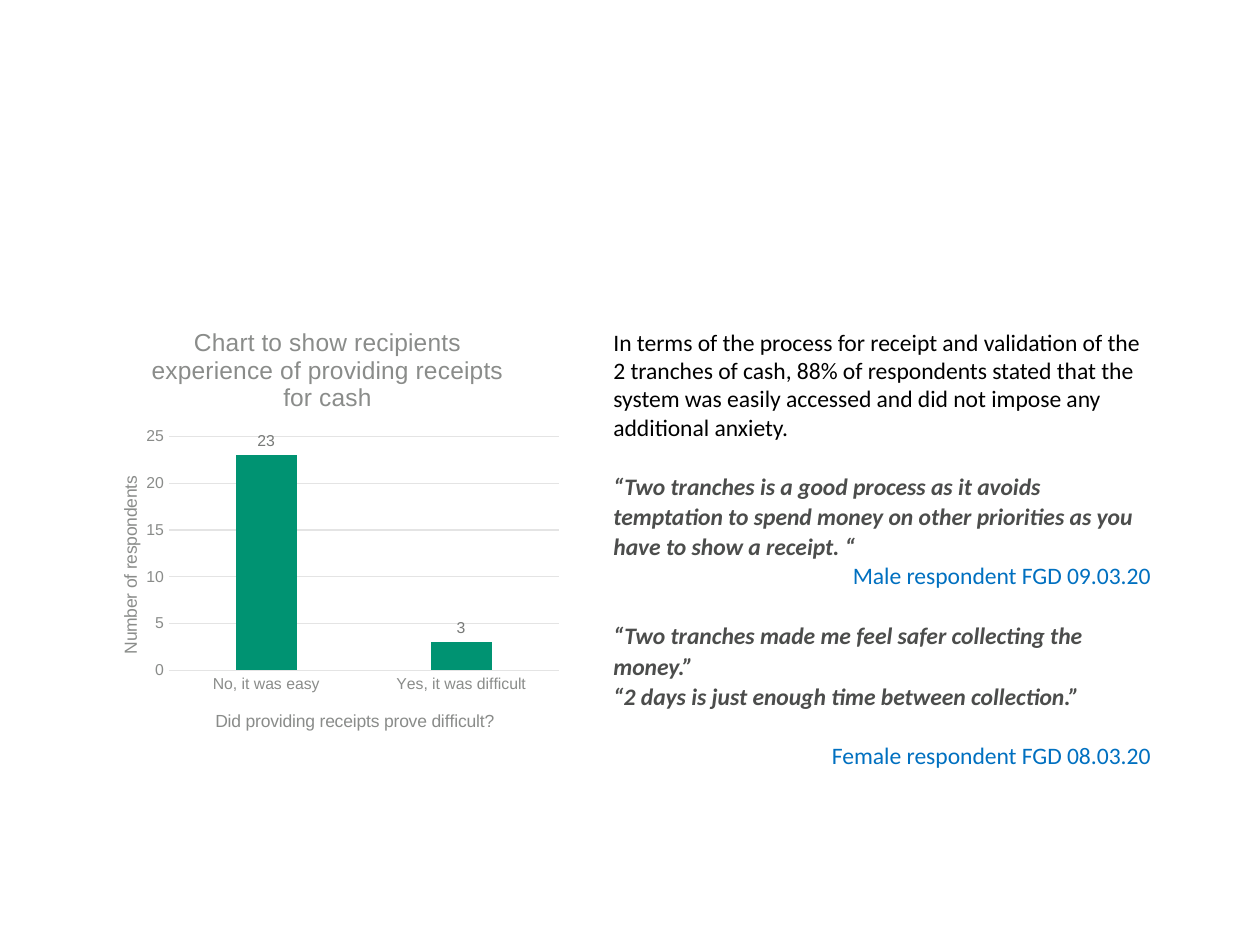
from lxml.etree import SubElement
from pptx import Presentation
from pptx.chart.data import CategoryChartData
from pptx.dml.color import RGBColor
from pptx.enum.chart import XL_CHART_TYPE as ChartType
from pptx.enum.chart import XL_LABEL_POSITION as LabelPosition
from pptx.enum.chart import XL_TICK_MARK as TickMark
from pptx.enum.text import PP_ALIGN as Align
from pptx.oxml import parse_xml
from pptx.oxml.ns import nsdecls, qn
from pptx.util import Inches, Pt

COLORS = {
    "body": "000000",
    "quote": "4C4D4C",
    "speaker": "0070C0",
    "bar": "009372",
    "axis": "8A8C8A",
    "label": "787A78",
    "grid": "E4E4E4",
}


def write(para, text, color="axis", size=10, font="Arial", bold=False,
          italic=False, align=None, before=0, spacing=1.0):
    span = para.add_run()
    span.text = text
    span.font.name = font
    span.font.size = Pt(size)
    span.font.bold = bold
    span.font.italic = italic
    span.font.color.rgb = RGBColor.from_string(COLORS[color])
    para.alignment = align
    para.space_before = Pt(before)
    para.line_spacing = spacing


def place(element, **position):
    layout = element.find(qn("c:layout"))
    if layout is None:
        layout = parse_xml(f"<c:layout {nsdecls('c')}/>")
        element.insert(0, layout)
    manual = SubElement(layout, qn("c:manualLayout"))
    if "w" in position:
        SubElement(manual, qn("c:layoutTarget")).set("val", "inner")
    for axis_name in ("x", "y"):
        SubElement(manual, qn(f"c:{axis_name}Mode")).set("val", "edge")
    for name, value in position.items():
        SubElement(manual, qn(f"c:{name}")).set("val", str(value))


deck = Presentation()
deck.slide_width, deck.slide_height = Inches(10), Inches(7.5)
page = deck.slides.add_slide(deck.slide_layouts[6])

box = page.shapes.add_textbox(Inches(4.77), Inches(2.55), Inches(4.46), Inches(4.09))
frame = box.text_frame
frame.word_wrap = True
quote = {"color": "quote", "bold": True, "italic": True, "spacing": 1.07}
speaker = {"color": "speaker", "align": Align.RIGHT}
findings = [
    ("In terms of the process for receipt and validation of the 2 tranches of cash, "
     "88% of respondents stated that the system was easily accessed and did not "
     "impose any additional anxiety.", {"color": "body"}),
    ("“Two tranches is a good process as it avoids temptation to spend money on "
     "other priorities as you have to show a receipt. “", {**quote, "before": 16.5}),
    ("Male respondent FGD 09.03.20", speaker),
    ("“Two tranches made me feel safer collecting the money.”", {**quote, "before": 17.5}),
    ("“2 days is just enough time between collection.”", quote),
    ("Female respondent FGD 08.03.20", {**speaker, "before": 17.5}),
]
for index, (text, style) in enumerate(findings):
    para = frame.add_paragraph() if index else frame.paragraphs[0]
    write(para, text, size=13.5, font="Calibri", **style)

data = CategoryChartData()
data.categories = ["No, it was easy", "Yes, it was difficult"]
data.add_series("Series 1", [23, 3])
chart = page.shapes.add_chart(ChartType.COLUMN_CLUSTERED, Inches(0.69), Inches(2.43),
                              Inches(3.82), Inches(3.57), data).chart
chart.has_legend = False
chart.font.name = "Arial"
chart.font.size = Pt(10)
chart.font.color.rgb = RGBColor.from_string(COLORS["quote"])
write(chart.chart_title.text_frame.paragraphs[0],
      "Chart to show recipients experience of providing receipts for cash", size=14)
place(chart._chartSpace.chart.plotArea, x=0.17, y=0.29, w=0.81, h=0.52)

axes = [
    (chart.category_axis, "Did providing receipts prove difficult?", 0.26, 0.89),
    (chart.value_axis, "Number of respondents", 0.06, 0.37),
]
for axis, title, left, top in axes:
    write(axis.axis_title.text_frame.paragraphs[0], title)
    place(axis.axis_title._element, x=left, y=top)
    axis.major_tick_mark = axis.minor_tick_mark = TickMark.NONE
    axis.tick_labels.font.name = "Arial"
    axis.tick_labels.font.size = Pt(9)
    axis.tick_labels.font.color.rgb = RGBColor.from_string(COLORS["axis"])

chart.value_axis.minimum_scale = 0
chart.value_axis.maximum_scale = 25
chart.value_axis.major_unit = 5
chart.value_axis.format.line.fill.background()
for line in (chart.category_axis.format.line, chart.value_axis.major_gridlines.format.line):
    line.color.rgb = RGBColor.from_string(COLORS["grid"])
    line.width = Pt(0.75)

plot = chart.plots[0]
plot.gap_width = 219
plot.overlap = -27
plot.vary_by_categories = False
bars = plot.series[0]
bars.format.fill.solid()
bars.format.fill.fore_color.rgb = RGBColor.from_string(COLORS["bar"])
labels = bars.data_labels
labels.show_value = True
labels.position = LabelPosition.OUTSIDE_END
labels.font.name = "Arial"
labels.font.size = Pt(9)
labels.font.color.rgb = RGBColor.from_string(COLORS["label"])

deck.save("out.pptx")
